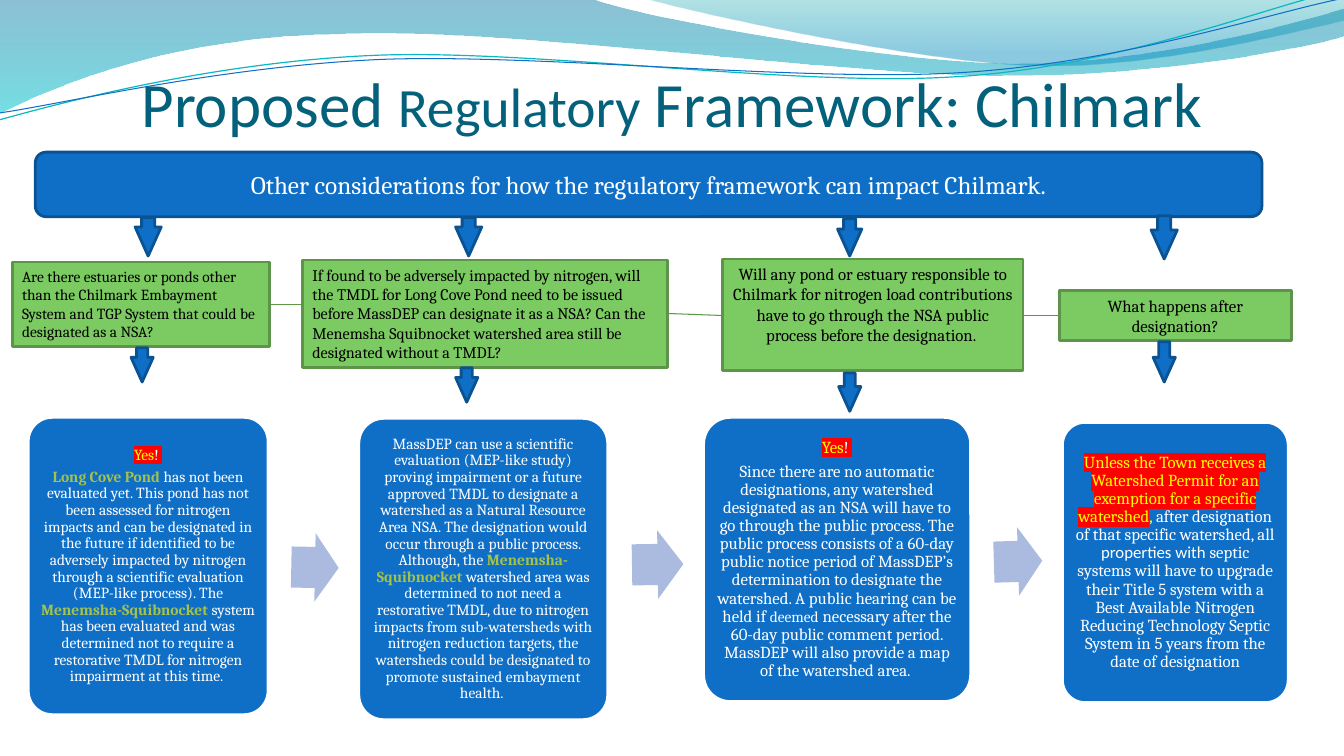
"""Build the regulatory framework slide for Chilmark."""
from lxml.etree import SubElement
from pptx import Presentation
from pptx.dml.color import RGBColor
from pptx.enum.shapes import MSO_CONNECTOR, MSO_SHAPE as Preset
from pptx.enum.text import MSO_ANCHOR as Anchor, PP_ALIGN as Align
from pptx.oxml.ns import qn
from pptx.util import Inches, Pt

COLORS = {
    "title": "04617B", "blue": "0F6FC6", "navy": "0B5292", "green": "7CCA62", "green_edge": "5C9549",
    "link": "5B9747", "arrow": "ABBBDF", "white": "FFFFFF", "black": "000000", "yellow": "FFFF00",
    "red": "FF0000", "lime": "A5C249", "teal": "0AB8BF",
    "wave_top": "0074A1", "wave_end": "00C6CF", "crest_top": "00A1A9", "crest_end": "008BBF",
}
STYLES = {
    "plain": {"color": "white"},
    "flag": {"color": "yellow", "highlight": "red"},
    "mark": {"color": "white", "highlight": "red"},
    "comma": {"color": "yellow"},
    "pond": {"color": "lime", "bold": True},
    "small": {"color": "white", "size": 11},
    "sans": {"color": "white", "name": "Calibri"},
    "dark": {"color": "black"},
    "title": {"color": "title", "name": "Calibri"},
    "title_small": {"color": "title", "name": "Calibri", "size": 39.6},
}
WAVES = [
    ((0, 0), [(5.87, -0.01), (6.34, 0.17, 8.85, 0.63, 10.11, 0.63), (11.38, 0.63, 12.78, 0.26, 13.33, 0.09),
              (13.35, 0.36), (13.11, 0.44, 11.6, 0.76, 9.94, 0.75), (8.29, 0.75, 5.09, 0.28, 3.43, 0.34),
              (1.72, 0.36, 0.61, 0.83, -0.01, 1.13), (0, 0)],
     [("wave_top", 0, 45), ("wave_end", 1, 55)]),
    ((6.39, -0.01), [(6.79, 0.11, 9.09, 0.62, 10.25, 0.65), (11.41, 0.69, 12.82, 0.32, 13.33, 0.21), (13.33, 0),
                     (6.39, -0.01)],
     [("crest_top", 0, 30), ("crest_end", 0.8, 45)]),
]
STRANDS = [
    ((-0.01, 1.19), [(0.64, 1.01, 2.11, 0.62, 3.69, 0.55), (5.27, 0.48, 7.9, 0.87, 9.5, 0.76),
                     (11.1, 0.66, 12.52, 0.08, 13.31, -0.1)], "teal", 0.85),
    ((0, 1.12), [(0.63, 1.03, 2.18, 0.66, 3.78, 0.59), (5.37, 0.53, 7.96, 0.82, 9.55, 0.72),
                 (11.15, 0.62, 12.55, 0.14, 13.34, -0.02)], "blue", 0.75),
]
TITLE = [[("Proposed ", "title"), ("Regulatory", "title_small"), (" Framework: Chilmark", "title")]]
BANNER = "Other considerations for how the regulatory framework can impact Chilmark."
QUESTIONS = [
    ((0.12, 2.6, 2.55, 0.84), 11, Align.LEFT, Anchor.TOP,
     "Are there estuaries or ponds other than the Chilmark Embayment System and TGP System that could be "
     "designated as a NSA?"),
    ((3, 2.58, 3.62, 1.07), 11.5, Align.LEFT, Anchor.TOP,
     "If found to be adversely impacted by nitrogen, will the TMDL for Long Cove Pond need to be issued before "
     "MassDEP can designate it as a NSA? Can the Menemsha Squibnocket watershed area still be designated "
     "without a TMDL?"),
    ((7.17, 2.57, 2.98, 1.11), 12, Align.CENTER, Anchor.TOP,
     "Will any pond or estuary responsible to Chilmark for nitrogen load contributions have to go through the "
     "NSA public process before the designation. "),
    ((10.51, 2.88, 2.3, 0.5), 12, Align.CENTER, Anchor.MIDDLE, "What happens after designation?"),
]
YES = [("Yes", "flag"), ("! ", "mark")]
ANSWERS = [
    ((0.28, 4.14, 2.38, 2.95), 11, [YES, [
        ("Long Cove Pond ", "pond"),
        ("has not been evaluated yet. This pond has not been assessed for nitrogen impacts and can be designated "
         "in the future if identified to be adversely impacted by nitrogen through a scientific evaluation "
         "(MEP-like process). The ", "plain"),
        ("Menemsha-Squibnocket ", "pond"),
        ("system has been evaluated and was determined not to require a restorative TMDL for nitrogen impairment "
         "at this time. ", "plain")]]),
    ((3.56, 4.15, 2.47, 2.99), 11, [[
        ("MassDEP can use a scientific evaluation (MEP-like study) proving impairment or a future approved TMDL "
         "to designate a watershed as a Natural Resource Area NSA. The designation would occur through a public "
         "process. Although, the ", "plain"),
        ("Menemsha-Squibnocket ", "pond"),
        ("watershed area was determined to not need a restorative TMDL, due to nitrogen impacts from "
         "sub-watersheds with nitrogen reduction targets, the watersheds could be designated to promote "
         "sustained embayment health. ", "plain")]]),
    ((6.98, 4.14, 2.65, 2.82), 12, [YES, [
        ("Since there are no automatic designations, any watershed designated as an NSA will have to go through "
         "the public process. The public process consists of a 60-day public notice period of MassDEP’s "
         "determination to designate the watershed. A public hearing can be held if ", "plain"),
        ("deemed", "small"),
        (" necessary after the 60-day public comment period. MassDEP will also provide a map of the watershed "
         "area. ", "plain")]]),
    ((10.54, 4.19, 2.24, 2.78), 12, [[
        ("Unless the Town receives a Watershed Permit for an exemption for a specific watershed", "flag"),
        (", ", "comma"),
        ("after designation of that specific watershed, all ", "plain"),
        ("properties with ", "sans"),
        ("septic systems will have to upgrade their Title 5 system with a Best Available Nitrogen Reducing "
         "Technology Septic System in 5 years from the date of designation", "plain")]]),
]
LINKS = [(2.67, 3.02, 3, 3.02), (6.62, 3.11, 7.17, 3.13), (10.15, 3.13, 10.51, 3.13)]
DOWN_ARROWS = [
    (1.34, 2.16, 0.26, 0.38), (4.52, 2.16, 0.26, 0.38), (8.31, 2.17, 0.24, 0.37), (11.42, 2.14, 0.26, 0.43),
    (1.3, 3.45, 0.22, 0.34), (4.52, 3.65, 0.22, 0.34), (8.32, 3.7, 0.22, 0.38), (11.44, 3.39, 0.22, 0.4),
]
NEXT_ARROWS = [((2.89, 5.29, 0.47, 0.68), 1.1), ((6.27, 5.26, 0.51, 0.68), 359.1), ((9.86, 5.23, 0.48, 0.68), 358.3)]


def rgb(name):
    return RGBColor.from_string(COLORS[name])


def add_curve(slide, start, segments, close):
    points = [[round(100 * value) for value in point] for point in (start, *segments)]
    ends = [point[-2:] for point in points]
    left, top = (min(values) for values in zip(*ends))
    builder = slide.shapes.build_freeform(*ends[0], scale=Inches(0.01))
    builder.add_line_segments(ends[1:], close=close)
    shape = builder.convert_to_shape()
    shape.shadow.inherit = False
    for step, point in zip(list(shape._element.iter(qn("a:lnTo"))), points[1:]):
        if len(point) == 6:
            step.tag = qn("a:cubicBezTo")
            for x, y in (point[:2], point[2:4]):
                SubElement(step, qn("a:pt"), x=str(x - left), y=str(y - top))
            step.append(step[0])
    return shape


def set_line(line, color, width):
    line.color.rgb = rgb(color)
    line.width = Pt(width)


def add_box(slide, preset, box, fill, edge=None, adjustments=(), rotation=0):
    shape = slide.shapes.add_shape(preset, *map(Inches, box))
    shape.shadow.inherit = False
    shape.rotation = rotation
    shape.fill.solid()
    shape.fill.fore_color.rgb = rgb(fill)
    if edge:
        set_line(shape.line, edge, 2)
    else:
        shape.line.fill.background()
    for index, value in enumerate(adjustments):
        shape.adjustments[index] = value
    return shape


def write(shape, paragraphs, size, align=Align.CENTER, anchor=Anchor.MIDDLE, margins=(0.1, 0.05), **spacing):
    frame = shape.text_frame
    side, edge = map(Inches, margins)
    layout = {"word_wrap": True, "vertical_anchor": anchor, "margin_left": side, "margin_right": side,
              "margin_top": edge, "margin_bottom": edge}
    for name, value in layout.items():
        setattr(frame, name, value)
    for index, runs in enumerate(paragraphs):
        paragraph = frame.add_paragraph() if index else frame.paragraphs[0]
        for name, value in {"alignment": align, **spacing}.items():
            setattr(paragraph, name, value)
        for text, style in runs:
            run = paragraph.add_run()
            run.text = text
            look = {"name": "Cambria", "size": size, "bold": False, **STYLES[style]}
            run.font.color.rgb = rgb(look["color"])
            if "highlight" in look:
                highlight = SubElement(run.font._element, qn("a:highlight"))
                SubElement(highlight, qn("a:srgbClr"), val=COLORS[look["highlight"]])
            for name, value in {"name": look["name"], "size": Pt(look["size"]), "bold": look["bold"]}.items():
                setattr(run.font, name, value)


def main():
    presentation = Presentation()
    presentation.slide_width, presentation.slide_height = Inches(40 / 3), Inches(7.5)
    slide = presentation.slides.add_slide(presentation.slide_layouts[6])

    for start, segments, stops in WAVES:
        wave = add_curve(slide, start, segments, True)
        wave.line.fill.background()
        wave.fill.gradient()
        wave.fill.gradient_angle = 270
        for stop, (color, position, _) in zip(wave.fill.gradient_stops, stops):
            stop.color.rgb = rgb(color)
            stop.position = position
        for element, (_, _, alpha) in zip(wave._element.spPr.iter(qn("a:srgbClr")), stops):
            SubElement(element, qn("a:alpha"), val=str(alpha * 1000))
    for start, segments, color, width in STRANDS:
        strand = add_curve(slide, start, segments, False)
        strand.fill.background()
        set_line(strand.line, color, width)

    title = slide.shapes.add_textbox(*map(Inches, (0, 0.62, 13.33, 0.77)))
    write(title, TITLE, 45, anchor=Anchor.BOTTOM, margins=(0, 0))
    banner = add_box(slide, Preset.ROUNDED_RECTANGLE, (0.35, 1.51, 12.17, 0.64), "blue", "navy")
    write(banner, [[(BANNER, "plain")]], 18)

    for ends in LINKS:
        link = slide.shapes.add_connector(MSO_CONNECTOR.STRAIGHT, *map(Inches, ends))
        set_line(link.line, "link", 0.75)
        SubElement(link._element.spPr, qn("a:effectLst"))
    for box, size, paragraphs in ANSWERS:
        card = add_box(slide, Preset.ROUNDED_RECTANGLE, box, "blue", "white", [0.1])
        write(card, paragraphs, size, margins=(0.05, 0.05), line_spacing=0.9, space_after=Pt(0.35 * size))
    for box, rotation in NEXT_ARROWS:
        add_box(slide, Preset.RIGHT_ARROW, box, "arrow", None, [0.6, 0.5], rotation)
    for box, size, align, anchor, text in QUESTIONS:
        question = add_box(slide, Preset.RECTANGLE, box, "green", "green_edge")
        write(question, [[(text, "dark")]], size, align, anchor)
    for box in DOWN_ARROWS:
        add_box(slide, Preset.DOWN_ARROW, box, "blue", "navy", [0.5, 1.11])
    presentation.save("out.pptx")


if __name__ == "__main__":
    main()
